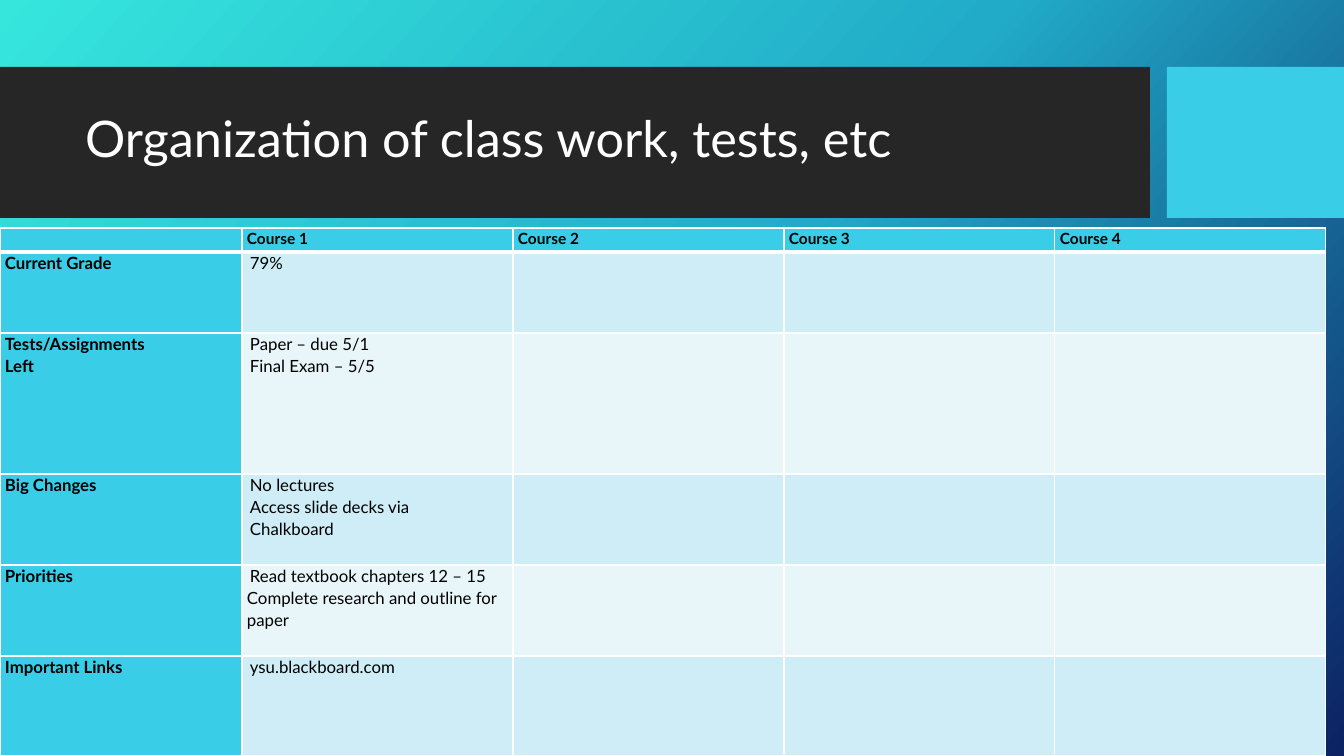
from copy import deepcopy
from dataclasses import dataclass

from lxml import etree
from pptx import Presentation
from pptx.dml.color import RGBColor
from pptx.enum.shapes import MSO_SHAPE
from pptx.enum.text import MSO_ANCHOR, MSO_AUTO_SIZE, PP_ALIGN
from pptx.oxml.ns import qn
from pptx.util import Emu, Pt

RECTANGLE = MSO_SHAPE.RECTANGLE
MIDDLE = MSO_ANCHOR.MIDDLE
NO_AUTOFIT = MSO_AUTO_SIZE.NONE
LEFT = PP_ALIGN.LEFT

SLIDE_W, SLIDE_H = 1344, 756
EMU_PER_PX = 12192000 / SLIDE_W


@dataclass(frozen=True)
class Theme:
    font: str = "Lato"
    title_size: float = 36
    header_size: float = 11
    body_size: float = 12
    backdrop: tuple = ((0, "36E6DD"), (0.5, "21ABC8"), (1, "0C2263"))
    banner: str = "262626"
    accent: str = "39CDE7"
    bands: tuple = ("CEEDF6", "E8F6FA")
    light: str = "FFFFFF"
    dark: str = "000000"
    rule: float = 1
    header_rule: float = 3


THEME = Theme()

COURSES = ["Course 1", "Course 2", "Course 3", "Course 4"]
INDENT = 3
# Each row: height, label lines, (line, indent) pairs for the first course
TOPICS = [
    (81, ["Current Grade"], [("79%", INDENT)]),
    (141, ["Tests/Assignments", "Left"],
     [("Paper – due 5/1", INDENT), ("Final Exam – 5/5", INDENT)]),
    (91, ["Big Changes"],
     [("No lectures", INDENT), ("Access slide decks via", INDENT),
      ("Chalkboard", INDENT)]),
    (91, ["Priorities"],
     [("Read textbook chapters 12 – 15", INDENT),
      ("Complete research and outline for paper", 0)]),
    (100, ["Important Links"], [("ysu.blackboard.com", INDENT)]),
]
HEADER_H = 24
LABEL_W, COURSE_W = 242, 271


def px(length):
    return Emu(round(length * EMU_PER_PX))


def rgb(color):
    return RGBColor.from_string(color)


def write(frame, lines, *, size, color, bold=False, spacing=1.07):
    """Fill a text frame with (text, indent) lines."""
    for index, (text, indent) in enumerate(lines):
        paragraph = frame.paragraphs[0] if index == 0 else frame.add_paragraph()
        paragraph.alignment = LEFT
        paragraph.line_spacing = spacing
        if indent:
            paragraph._p.get_or_add_pPr().set("marL", str(px(indent)))
        run = paragraph.add_run()
        run.text = text
        run.font.name = THEME.font
        run.font.size = Pt(size)
        run.font.bold = bold
        run.font.color.rgb = rgb(color)


def paint_backdrop(slide):
    fill = slide.background.fill
    fill.gradient()
    fill.gradient_angle = 318
    stop_list = slide._element.find(".//" + qn("a:gsLst"))
    stop_list.append(deepcopy(stop_list[-1]))
    for stop, (position, color) in zip(fill.gradient_stops, THEME.backdrop):
        stop.position = position
        stop.color.rgb = rgb(color)


def add_block(slide, left, top, width, height, color):
    block = slide.shapes.add_shape(
        RECTANGLE, px(left), px(top), px(width), px(height))
    block.shadow.inherit = False
    block.fill.solid()
    block.fill.fore_color.rgb = rgb(color)
    block.line.fill.background()
    # Keep the block behind the title placeholder
    slide.shapes._spTree.insert(2, block._element)


def add_title_band(slide, left, top, width, height):
    banner_w, accent_w = 1150, 177
    add_block(slide, left, top, banner_w, height, THEME.banner)
    add_block(slide, left + width - accent_w, top, accent_w, height, THEME.accent)

    title = slide.shapes.title
    title.left, title.top = px(left + 75), px(top + 15)
    title.width, title.height = px(1059), px(119)
    frame = title.text_frame
    frame.word_wrap = True
    frame.auto_size = NO_AUTOFIT
    frame.vertical_anchor = MIDDLE
    write(frame, [("Organization of class work, tests, etc", 0)],
          size=THEME.title_size, color=THEME.light, spacing=0.9)


def format_cell(cell, fill, top_rule, bottom_rule):
    cell.margin_left = cell.margin_right = px(5)
    cell.margin_top = cell.margin_bottom = 0
    properties = cell._tc.get_or_add_tcPr()
    rules = {"L": THEME.rule, "R": THEME.rule, "T": top_rule, "B": bottom_rule}
    for side, width in rules.items():
        line = etree.SubElement(properties, qn(f"a:ln{side}"), w=str(Pt(width)))
        solid = etree.SubElement(line, qn("a:solidFill"))
        etree.SubElement(solid, qn("a:srgbClr"), val=THEME.light)
    cell.fill.solid()
    cell.fill.fore_color.rgb = rgb(fill)


def add_course_table(slide, left, top, width, height):
    grid = slide.shapes.add_table(
        len(TOPICS) + 1, len(COURSES) + 1,
        px(left), px(top), px(width), px(height)).table
    grid.first_row = grid.horz_banding = False
    for index, column in enumerate(grid.columns):
        column.width = px(COURSE_W if index else LABEL_W)
    row_heights = [HEADER_H] + [topic[0] for topic in TOPICS]
    for row, row_height in zip(grid.rows, row_heights):
        row.height = px(row_height)

    # Fills and rules
    for r in range(len(row_heights)):
        for c in range(len(COURSES) + 1):
            is_head = r == 0 or c == 0
            fill = THEME.accent if is_head else THEME.bands[(r - 1) % 2]
            format_cell(grid.cell(r, c), fill,
                        THEME.header_rule if r == 1 else THEME.rule,
                        THEME.header_rule if r == 0 else THEME.rule)

    # Course names
    for c, course in enumerate(COURSES, start=1):
        write(grid.cell(0, c).text_frame, [(course, 0)],
              size=THEME.header_size, color=THEME.dark, bold=True)

    # Topic labels and first course entries
    for r, (_, label, entries) in enumerate(TOPICS, start=1):
        write(grid.cell(r, 0).text_frame, [(text, 0) for text in label],
              size=THEME.body_size, color=THEME.dark, bold=True)
        write(grid.cell(r, 1).text_frame, entries,
              size=THEME.body_size, color=THEME.dark)

    # Small type in empty cells keeps the row heights
    for cell in grid.iter_cells():
        if not cell.text:
            etree.SubElement(cell.text_frame.paragraphs[0]._p,
                             qn("a:endParaRPr"),
                             sz=str(round(THEME.header_size * 100)))


def main():
    deck = Presentation()
    deck.slide_width, deck.slide_height = px(SLIDE_W), px(SLIDE_H)
    slide = deck.slides.add_slide(deck.slide_layouts.get_by_name("Title Only"))
    paint_backdrop(slide)
    add_title_band(slide, 0, 67, SLIDE_W, 151)
    add_course_table(slide, 0, 228, LABEL_W + COURSE_W * len(COURSES), 528)
    deck.save("out.pptx")


if __name__ == "__main__":
    main()
